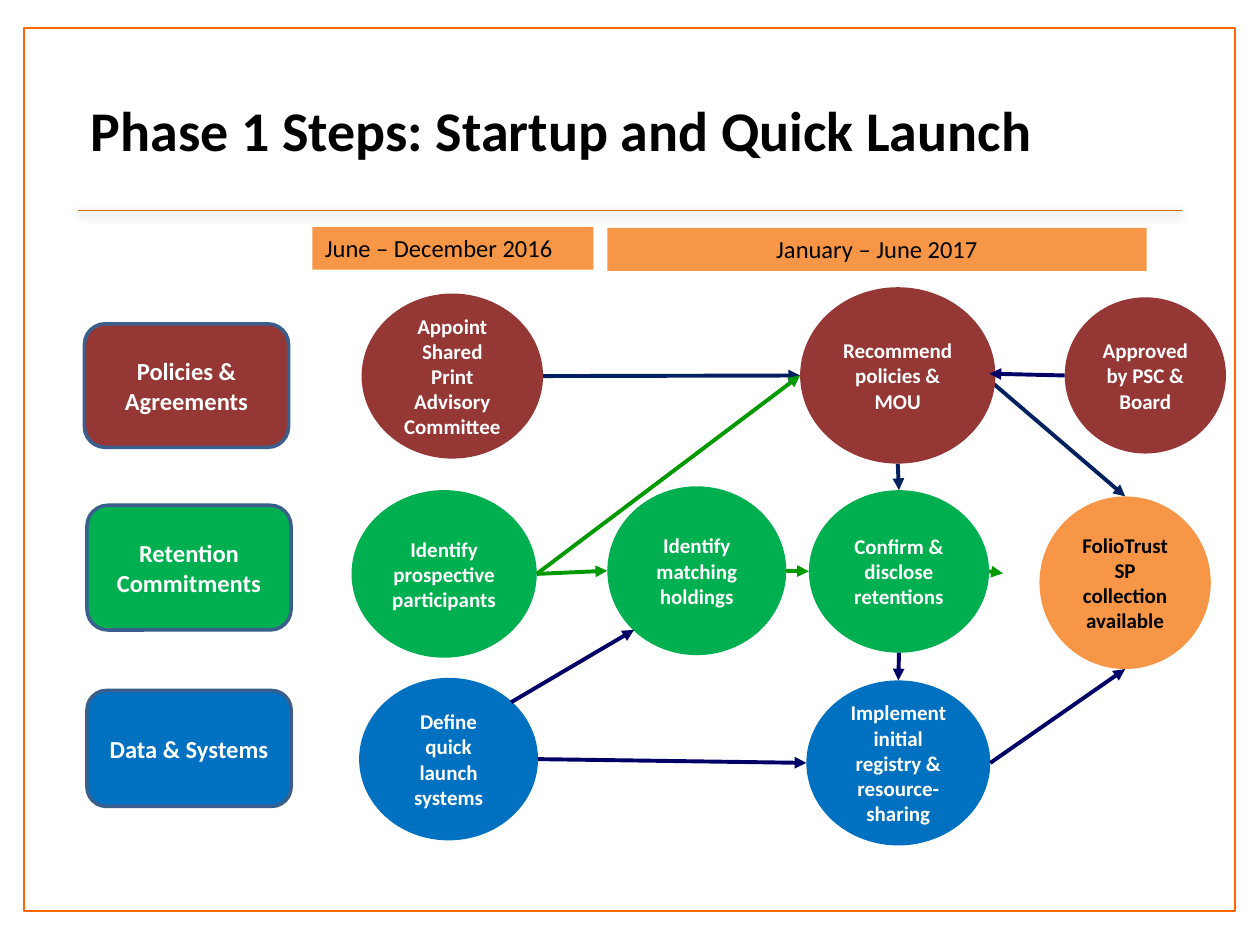
from dataclasses import dataclass

from lxml.etree import SubElement
from pptx import Presentation
from pptx.dml.color import RGBColor
from pptx.enum.shapes import MSO_CONNECTOR, MSO_SHAPE
from pptx.enum.text import MSO_ANCHOR, PP_ALIGN
from pptx.oxml.ns import qn
from pptx.util import Inches, Pt


@dataclass(frozen=True)
class Theme:
    font: str = "Calibri"
    title_size: int = 32
    label_size: int = 14
    step_size: int = 12
    arrow_width: float = 2.25
    white: str = "FFFFFF"
    black: str = "000000"
    frame: str = "FF6600"
    rule: str = "D57007"
    outline: str = "3A5F8C"
    policies: str = "953735"
    retention: str = "00B050"
    systems: str = "0070C0"
    result: str = "F79646"
    navy: str = "002060"
    indigo: str = "000066"
    green: str = "009900"


@dataclass(frozen=True)
class Area:
    """A rectangle in grid columns and rows."""
    left: float
    top: float
    width: float
    height: float

    def point(self, across, down):
        """Grid position at the given shares of the width and height."""
        return self.left + across * self.width, self.top + down * self.height


TOP, BOTTOM, LEFT, RIGHT = (0.5, 0), (0.5, 1), (0, 0.5), (1, 0.5)
UPPER_RIGHT, LOWER_LEFT = (0.85, 0.15), (0.15, 0.85)


def write_text(shape, text, *, font, size, color, bold=False,
               align=PP_ALIGN.CENTER, anchor=MSO_ANCHOR.MIDDLE):
    frame = shape.text_frame
    frame.word_wrap = True
    frame.vertical_anchor = anchor
    para = frame.paragraphs[0]
    para.alignment = align
    span = para.add_run()
    span.text = text
    span.font.name, span.font.size, span.font.bold = font, Pt(size), bold
    span.font.color.rgb = RGBColor.from_string(color)


class SlideBuilder:
    """Draws on one slide with a grid of 100 columns by 75 rows."""

    def __init__(self, deck, theme):
        self.theme = theme
        self.slide = deck.slides.add_slide(deck.slide_layouts[6])
        self.column = deck.slide_width / 100
        self.row = deck.slide_height / 75

    def place(self, across, down):
        return round(across * self.column), round(down * self.row)

    def bounds(self, area):
        return (*self.place(area.left, area.top),
                *self.place(area.width, area.height))

    def shape(self, kind, area, fill, line=None, line_width=1):
        shape = self.slide.shapes.add_shape(kind, *self.bounds(area))
        shape.shadow.inherit = False
        shape.fill.solid()
        shape.fill.fore_color.rgb = RGBColor.from_string(fill)
        if line:
            shape.line.color.rgb = RGBColor.from_string(line)
            shape.line.width = Pt(line_width)
        else:
            shape.line.fill.background()
        return shape

    def title(self, text, area):
        box = self.slide.shapes.add_textbox(*self.bounds(area))
        write_text(box, text, font=self.theme.font, size=self.theme.title_size,
                   color=self.theme.black, bold=True, align=PP_ALIGN.LEFT,
                   anchor=MSO_ANCHOR.TOP)

    def period(self, text, area, align):
        bar = self.shape(MSO_SHAPE.RECTANGLE, area, self.theme.result)
        write_text(bar, text, font=self.theme.font, size=self.theme.label_size,
                   color=self.theme.black, align=align, anchor=MSO_ANCHOR.TOP)

    def track(self, text, area, fill):
        label = self.shape(MSO_SHAPE.ROUNDED_RECTANGLE, area, fill,
                           self.theme.outline, 2)
        write_text(label, text, font=self.theme.font,
                   size=self.theme.label_size, color=self.theme.white, bold=True)

    def step(self, text, area, fill):
        oval = self.shape(MSO_SHAPE.OVAL, area, fill)
        color = self.theme.black if fill == self.theme.result else self.theme.white
        write_text(oval, text, font=self.theme.font, size=self.theme.step_size,
                   color=color, bold=True)

    def line(self, start, end, color, width):
        """Draw a line; return it with its empty effect list."""
        line = self.slide.shapes.add_connector(
            MSO_CONNECTOR.STRAIGHT, *self.place(*start), *self.place(*end))
        line.line.color.rgb = RGBColor.from_string(color)
        line.line.width = Pt(width)
        properties = line._element.spPr
        return line, SubElement(properties, qn("a:effectLst"))

    def rule(self, start, end):
        _, effects = self.line(start, end, self.theme.rule, 1)
        shadow = SubElement(effects, qn("a:outerShdw"), blurRad=str(Pt(5)),
                            dist=str(Pt(1.8)), dir="5400000", rotWithShape="0")
        color = SubElement(shadow, qn("a:srgbClr"), val=self.theme.black)
        SubElement(color, qn("a:alpha"), val="35000")

    def arrow(self, start, end, color):
        arrow, _ = self.line(start, end, color, self.theme.arrow_width)
        SubElement(arrow.line._get_or_add_ln(), qn("a:tailEnd"), type="triangle")


def main():
    deck = Presentation()
    deck.slide_width, deck.slide_height = Inches(10), Inches(7.5)
    theme = Theme()
    page = SlideBuilder(deck, theme)

    appoint = Area(28.7, 23.3, 14.4, 13.1)
    recommend = Area(63.5, 22.8, 15.5, 14)
    approved = Area(84.5, 23.6, 12.8, 12.4)
    prospects = Area(27.9, 38.9, 14.7, 13.3)
    holdings = Area(48.2, 38.6, 14.2, 13.4)
    confirm = Area(64.2, 38.9, 14.3, 12.9)
    available = Area(82.5, 39.4, 13.6, 13.7)
    define = Area(28.5, 53.8, 14.2, 12.9)
    registry = Area(64, 54, 14.6, 13.1)

    page.shape(MSO_SHAPE.RECTANGLE, Area(1.9, 2.2, 96.1, 70.1),
               theme.white, theme.frame)
    page.rule((6.2, 16.7), (93.8, 16.7))
    page.title("Phase 1 Steps: Startup and Quick Launch",
               Area(6.2, 7.1, 81.2, 6.4))
    page.period("June – December 2016", Area(24.8, 18, 22.3, 3.4), PP_ALIGN.LEFT)
    page.period("January – June 2017", Area(48.2, 18.1, 42.8, 3.4),
                PP_ALIGN.CENTER)

    for text, area, fill in (
        ("Policies & Agreements", Area(6.7, 25.7, 16.2, 9.8), theme.policies),
        ("Retention Commitments", Area(6.9, 40.1, 16.2, 9.9), theme.retention),
        ("Data & Systems", Area(6.9, 54.8, 16.2, 9.2), theme.systems),
    ):
        page.track(text, area, fill)

    def connect(source, source_share, target, target_share, color):
        page.arrow(source.point(*source_share), target.point(*target_share), color)

    # These arrows run partly beneath the steps.
    connect(appoint, RIGHT, recommend, LEFT, theme.navy)
    connect(recommend, (0.92, 0.48), available, TOP, theme.navy)
    connect(recommend, BOTTOM, confirm, TOP, theme.navy)
    connect(prospects, RIGHT, holdings, LEFT, theme.green)

    for text, area, fill in (
        ("Appoint Shared Print Advisory Committee", appoint, theme.policies),
        ("Recommend policies & MOU", recommend, theme.policies),
        ("Approved by PSC & Board", approved, theme.policies),
        ("Identify prospective participants", prospects, theme.retention),
        ("Identify matching holdings", holdings, theme.retention),
        ("Confirm & disclose retentions", confirm, theme.retention),
        ("FolioTrust SP collection available", available, theme.result),
        ("Define quick launch systems", define, theme.systems),
        ("Implement initial registry & resource-sharing", registry, theme.systems),
    ):
        page.step(text, area, fill)

    connect(define, UPPER_RIGHT, holdings, LOWER_LEFT, theme.indigo)
    connect(registry, RIGHT, available, BOTTOM, theme.indigo)
    connect(prospects, RIGHT, recommend, LEFT, theme.green)
    connect(confirm, BOTTOM, registry, TOP, theme.indigo)
    connect(holdings, RIGHT, confirm, LEFT, theme.green)
    page.arrow(confirm.point(*RIGHT), (79.6, 45.5), theme.green)
    connect(define, RIGHT, registry, LEFT, theme.indigo)
    connect(approved, LEFT, recommend, (0.97, 0.49), theme.indigo)

    deck.save("out.pptx")


if __name__ == "__main__":
    main()
